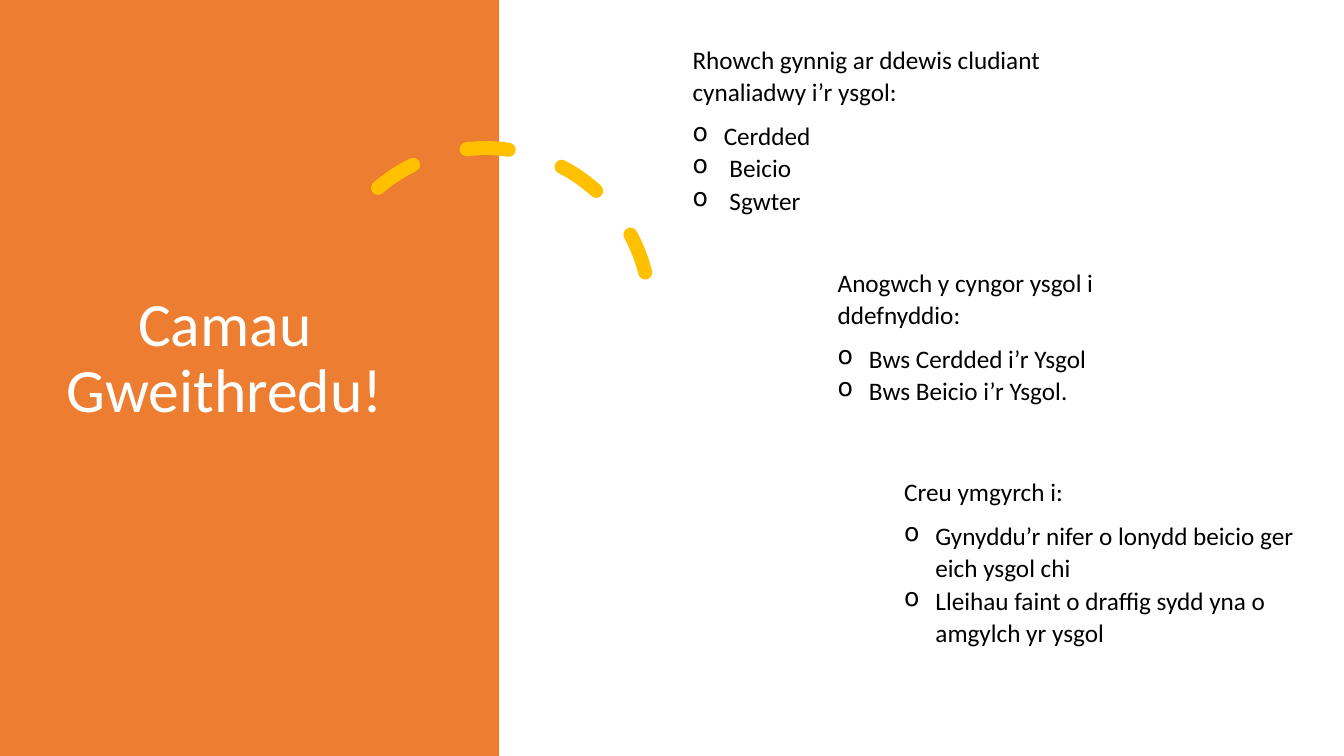
import pptx
import pptx.util
import pptx.dml.color
import pptx.enum.dml
import pptx.enum.shapes
import pptx.enum.text
import pptx.oxml.ns
from lxml import etree

# Content: each block is a lead line and its bullets
TITLE = "Camau Gweithredu!"
BLOCKS = [
    ("Rhowch gynnig ar ddewis cludiant cynaliadwy i’r ysgol:",
     ["Cerdded", " Beicio", " Sgwter"]),
    ("Anogwch y cyngor ysgol i ddefnyddio:",
     ["Bws Cerdded i’r Ysgol", "Bws Beicio i’r Ysgol."]),
    ("Creu ymgyrch i:",
     ["Gynyddu’r nifer o lonydd beicio ger eich ysgol chi",
      "Lleihau faint o draffig sydd yna o amgylch yr ysgol"]),
]

# Layout in inches: left, top, width, height
W, H = 13.33, 7.5
PANEL = (0, 0, 4.95, H)
ARC = (3.18, 1.47, 3.27, 3.27)
TITLE_BOX = (0.49, 0.85, 3.48, 6.09)
TITLE_LIFT = 0.71
BLOCK_BOXES = [(6.77, 0.37, 4.71, 1.82), (8.21, 2.58, 3.95, 1.5),
               (8.87, 4.66, 4.46, 2.14)]
INDENT = 0.31

THEME = {
    "font": "Calibri", "title": 44, "body": 18, "arc": 10,
    "panel": "ED7D31", "accent": "FFC000", "light": "FFFFFF", "dark": "000000",
}


def rgb(name):
    return pptx.dml.color.RGBColor.from_string(THEME[name])


def inches(box):
    return [pptx.util.Inches(v) for v in box]


def add_text(s, box):
    tf = s.shapes.add_textbox(*inches(box)).text_frame
    tf.word_wrap = True
    return tf


def write(p, text, size, color, spacing):
    p.text = text
    p.line_spacing = spacing
    for r in p.runs:
        r.font.name = THEME["font"]
        r.font.size = pptx.util.Pt(THEME[size])
        r.font.color.rgb = rgb(color)


def add_bullet(p):
    pPr = p._p.get_or_add_pPr()
    pPr.set("marL", str(pptx.util.Inches(INDENT)))
    pPr.set("indent", str(-pptx.util.Inches(INDENT)))
    etree.SubElement(pPr, pptx.oxml.ns.qn("a:buChar")).set("char", "o")


def add_block(s, box, lead, bullets):
    tf = add_text(s, box)
    write(tf.paragraphs[0], lead, "body", "dark", 1.07)
    tf.paragraphs[0].space_after = pptx.util.Pt(8)
    for text in bullets:
        p = tf.add_paragraph()
        add_bullet(p)
        write(p, text, "body", "dark", 1.07)


def main():
    prs = pptx.Presentation()
    prs.slide_width, prs.slide_height = inches((W, H))
    s = prs.slides.add_slide(prs.slide_layouts[6])
    shapes = pptx.enum.shapes.MSO_SHAPE

    # Coloured panel
    panel = s.shapes.add_shape(shapes.RECTANGLE, *inches(PANEL))
    panel.shadow.inherit = False
    panel.fill.solid()
    panel.fill.fore_color.rgb = rgb("panel")
    panel.line.fill.background()

    # Dashed arc with round ends
    arc = s.shapes.add_shape(shapes.ARC, *inches(ARC))
    arc.shadow.inherit = False
    arc.rotation = 345.8
    arc.adjustments[0], arc.adjustments[1] = 146.13, 0
    arc.fill.background()
    arc.line.color.rgb = rgb("accent")
    arc.line.width = pptx.util.Pt(THEME["arc"])
    arc.line.dash_style = pptx.enum.dml.MSO_LINE.DASH
    arc._element.spPr.find(pptx.oxml.ns.qn("a:ln")).set("cap", "rnd")

    # Title, lifted above the middle of its box
    tf = add_text(s, TITLE_BOX)
    tf.vertical_anchor = pptx.enum.text.MSO_ANCHOR.MIDDLE
    tf.margin_bottom = pptx.util.Inches(TITLE_LIFT)
    write(tf.paragraphs[0], TITLE, "title", "light", 0.9)
    tf.paragraphs[0].alignment = pptx.enum.text.PP_ALIGN.CENTER

    # Action blocks
    for box, (lead, bullets) in zip(BLOCK_BOXES, BLOCKS):
        add_block(s, box, lead, bullets)

    prs.save("out.pptx")


if __name__ == "__main__":
    main()
